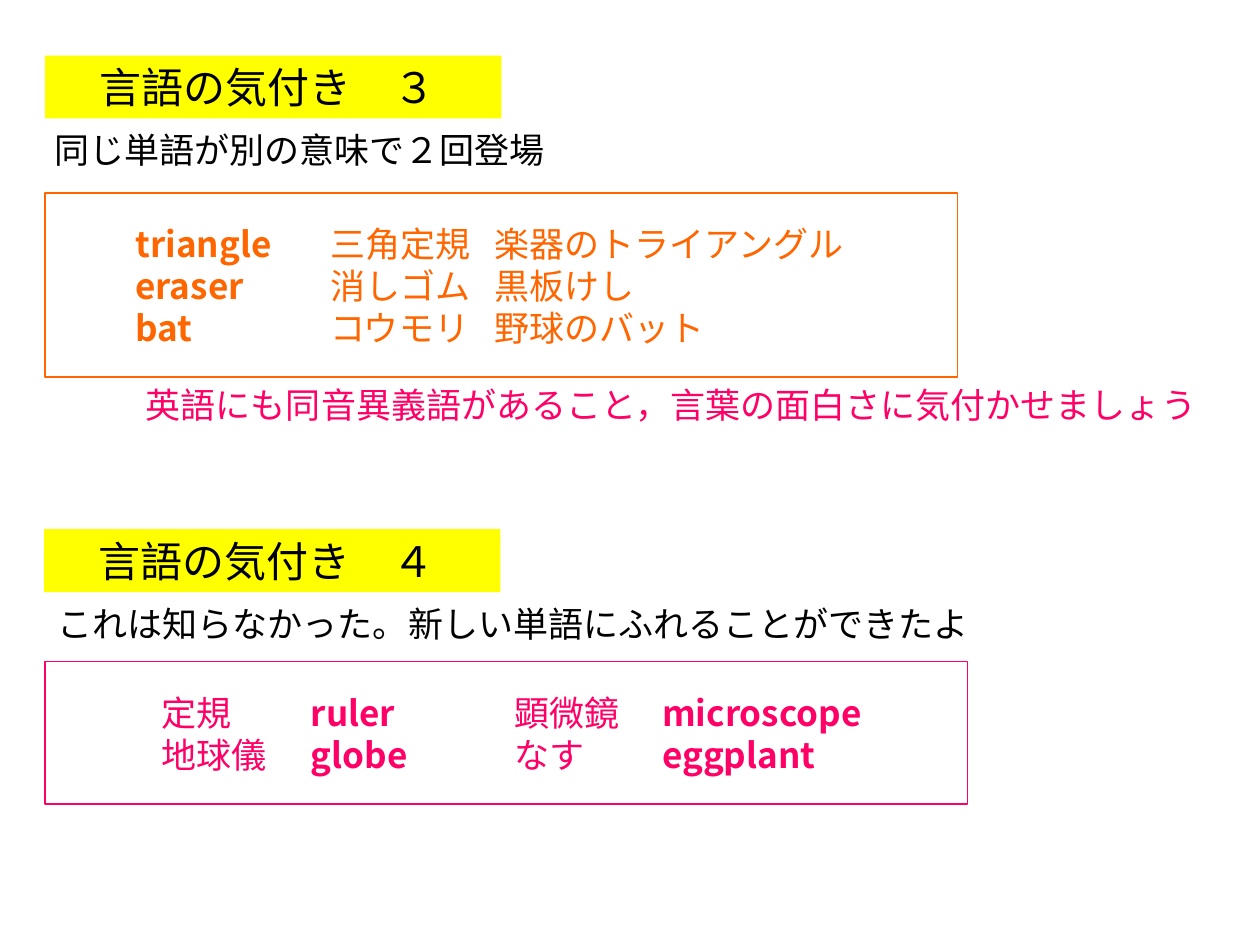
from lxml import etree
from pptx import Presentation
from pptx.dml.color import RGBColor
from pptx.enum.shapes import MSO_SHAPE
from pptx.enum.text import MSO_ANCHOR, PP_ALIGN
from pptx.oxml.ns import qn
from pptx.util import Cm, Pt

RECT = MSO_SHAPE.RECTANGLE
TOP, MIDDLE = MSO_ANCHOR.TOP, MSO_ANCHOR.MIDDLE
LEFT = PP_ALIGN.LEFT
FONT = "Noto Sans CJK JP"
HEX = {"black": "000000", "yellow": "FFFF00", "orange": "FF6600", "pink": "FF0066"}


def color(name):
    return RGBColor.from_string(HEX[name])


def apply(item, form):
    for key, value in form.items():
        setattr(item, key, value)


def write(para, text, size, hue, bold=False):
    apply(para, {"alignment": LEFT, "line_spacing": Pt(size * 1.2)})
    run = para.add_run()
    run.text = text
    apply(run.font, {"name": FONT, "size": Pt(size), "bold": bold})
    run.font.color.rgb = color(hue)
    east = etree.SubElement(run.font._element, qn("a:ea"))
    east.set("typeface", FONT)


def set_tabs(para, stops):
    tabs = etree.SubElement(para._p.get_or_add_pPr(), qn("a:tabLst"))
    for stop in stops:
        tab = etree.SubElement(tabs, qn("a:tab"))
        tab.set("pos", str(Cm(stop)))
        tab.set("algn", "l")


def add_rect(slide, box):
    shape = slide.shapes.add_shape(RECT, *map(Cm, box))
    shape.shadow.inherit = False
    return shape


def add_title(slide, box, text):
    shape = add_rect(slide, box)
    shape.fill.solid()
    shape.fill.fore_color.rgb = color("yellow")
    shape.line.fill.background()
    frame = shape.text_frame
    apply(frame, {"margin_left": Cm(1.1), "word_wrap": True, "vertical_anchor": MIDDLE})
    write(frame.paragraphs[0], text, 24, "black")


def add_note(slide, box, text, hue):
    frame = slide.shapes.add_textbox(*map(Cm, box)).text_frame
    apply(frame, {"word_wrap": True, "vertical_anchor": MIDDLE})
    write(frame.paragraphs[0], text, 20, hue)


def add_words(slide, box, rows, hue, inset, stops, strong):
    shape = add_rect(slide, box)
    shape.fill.background()
    shape.line.color.rgb = color(hue)
    shape.line.width = Pt(0.75)
    frame = shape.text_frame
    apply(frame, {"margin_left": Cm(inset), "margin_top": Cm(0.6),
                  "word_wrap": True, "vertical_anchor": TOP})
    for i, row in enumerate(rows):
        para = frame.add_paragraph() if i else frame.paragraphs[0]
        for j, word in enumerate(row):
            write(para, "\t" + word if j else word, 20, hue, j in strong)
        set_tabs(para, stops)


def main():
    deck = Presentation()
    apply(deck, {"slide_width": Cm(25.4), "slide_height": Cm(19.05)})
    slide = deck.slides.add_slide(deck.slide_layouts[6])

    add_title(slide, (0.91, 1.12, 9.2, 1.27), "言語の気付き　３")
    add_note(slide, (0.84, 2.46, 22.2, 1.12), "同じ単語が別の意味で２回登場", "black")
    pairs = [
        ("triangle", "三角定規", "楽器のトライアングル"),
        ("eraser", "消しゴム", "黒板けし"),
        ("bat", "コウモリ", "野球のバット"),
    ]
    add_words(slide, (0.91, 3.89, 18.39, 3.71), pairs, "orange", 1.82, (3.93, 7.24), {0})
    add_note(slide, (2.69, 7.59, 21.92, 1.12),
             "英語にも同音異義語があること，言葉の面白さに気付かせましょう", "pink")

    add_title(slide, (0.89, 10.67, 9.2, 1.27), "言語の気付き　４")
    add_note(slide, (0.91, 11.94, 23.06, 1.27),
             "これは知らなかった。新しい単語にふれることができたよ", "black")
    terms = [
        ("定規", "ruler", "顕微鏡", "microscope"),
        ("地球儀", "globe", "なす", "eggplant"),
    ]
    add_words(slide, (0.91, 13.34, 18.59, 2.87), terms, "pink", 2.34,
              (3.02, 7.12, 10.1), {1, 3})
    deck.save("out.pptx")


if __name__ == "__main__":
    main()
